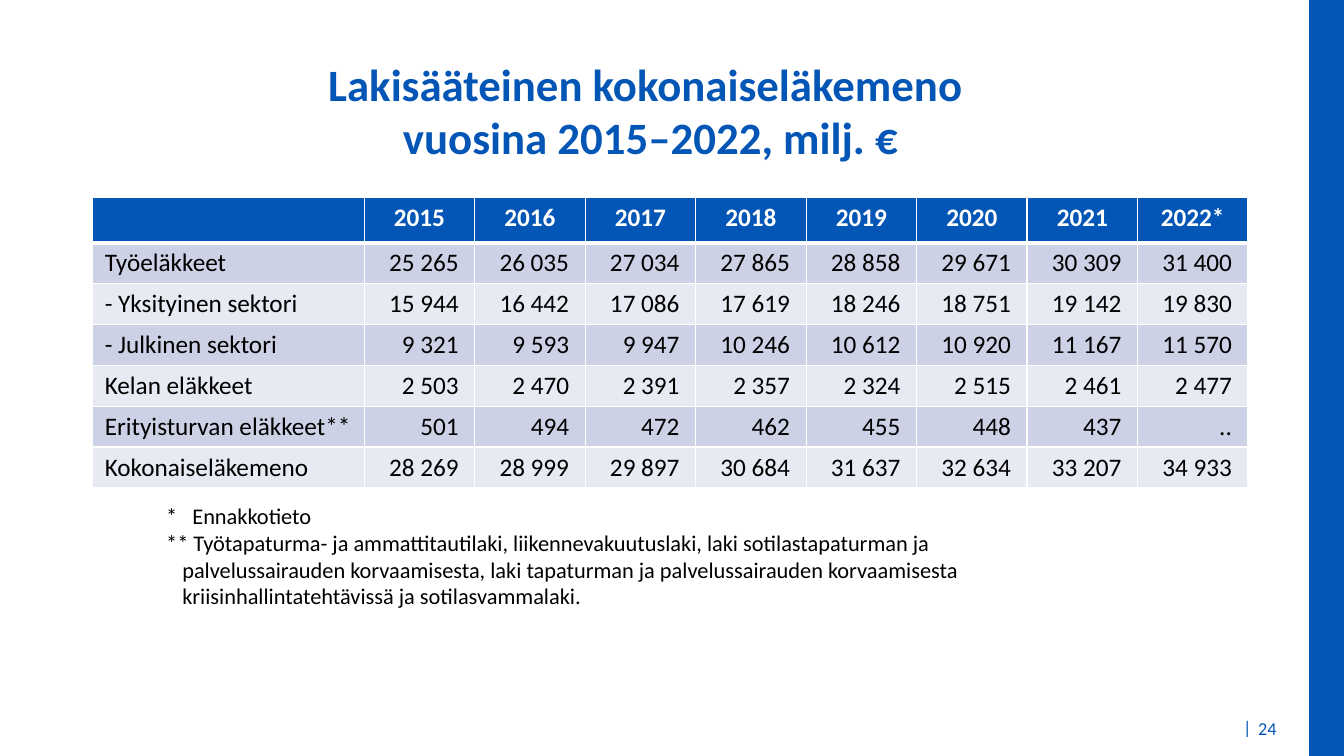
from pptx import Presentation
from pptx import util as u
from pptx.dml.color import RGBColor
from pptx.enum import shapes, text
from pptx.oxml import parse_xml
from pptx.oxml.ns import nsdecls

WIDTH, HEIGHT = u.Inches(13.33), u.Inches(7.5)
BLUE = RGBColor(0x03, 0x56, 0xB5)
WHITE = RGBColor(0xFF, 0xFF, 0xFF)
BLACK = RGBColor(0, 0, 0)
BAND_DARK = RGBColor(0xCC, 0xD1, 0xE5)
BAND_LIGHT = RGBColor(0xE7, 0xE9, 0xF3)

TITLE_FORMAT = {"size": u.Pt(32), "bold": True, "color": BLUE}
HEADER_FORMAT = {"size": u.Pt(18), "bold": True, "color": WHITE}
BODY_FORMAT = {"size": u.Pt(18), "bold": False, "color": BLACK}
NOTE_FORMAT = {"size": u.Pt(16), "color": BLACK}
FOOTER_FORMAT = {"size": u.Pt(13), "color": BLUE}

YEARS = ["", "2015", "2016", "2017", "2018", "2019", "2020", "2021", "2022*"]
EXPENDITURE = [
    ["Työeläkkeet", "25 265", "26 035", "27 034", "27 865", "28 858", "29 671", "30 309", "31 400"],
    ["- Yksityinen sektori", "15 944", "16 442", "17 086", "17 619", "18 246", "18 751", "19 142", "19 830"],
    ["- Julkinen sektori", "9 321", "9 593", "9 947", "10 246", "10 612", "10 920", "11 167", "11 570"],
    ["Kelan eläkkeet", "2 503", "2 470", "2 391", "2 357", "2 324", "2 515", "2 461", "2 477"],
    ["Erityisturvan eläkkeet**", "501", "494", "472", "462", "455", "448", "437", ".."],
    ["Kokonaiseläkemeno", "28 269", "28 999", "29 897", "30 684", "31 637", "32 634", "33 207", "34 933"],
]
NOTES = [
    ("*\tEnnakkotieto", 0.26),
    ("** Työtapaturma- ja ammattitautilaki, liikennevakuutuslaki, laki sotilastapaturman ja "
     "palvelussairauden korvaamisesta, laki tapaturman ja palvelussairauden korvaamisesta "
     "kriisinhallintatehtävissä ja sotilasvammalaki.", 0.16),
]


def percent_box(left, top, width, height):
    return (int(WIDTH * left / 100), int(HEIGHT * top / 100),
            int(WIDTH * width / 100), int(HEIGHT * height / 100))


def format_paragraph(paragraph, values, alignment=text.PP_ALIGN.LEFT):
    paragraph.alignment = alignment
    font = paragraph.font
    font.name = "Calibri"
    for name, value in values.items():
        if name == "color":
            font.color.rgb = value
        else:
            setattr(font, name, value)


def add_text(slide, box, words, values, alignment=text.PP_ALIGN.LEFT,
             anchor=text.MSO_ANCHOR.TOP, wrap=True):
    frame = slide.shapes.add_textbox(*box).text_frame
    frame.word_wrap = wrap
    frame.vertical_anchor = anchor
    frame.text = words
    format_paragraph(frame.paragraphs[0], values, alignment)
    return frame


def add_side_bar(slide, box):
    bar = slide.shapes.add_shape(shapes.MSO_SHAPE.RECTANGLE, *box)
    bar.shadow.inherit = False
    bar.fill.solid()
    bar.fill.fore_color.rgb = BLUE
    bar.line.fill.background()


def set_borders(cell, widths):
    properties = cell._tc.get_or_add_tcPr()
    for position, (side, points) in enumerate(widths.items()):
        properties.insert(position, parse_xml(
            f'<a:{side} {nsdecls("a")} w="{u.Pt(points)}"><a:solidFill>'
            f'<a:srgbClr val="{WHITE}"/></a:solidFill></a:{side}>'))


def fill_cell(cell, words, row, column):
    cell.text = words
    cell.fill.solid()
    paragraph = cell.text_frame.paragraphs[0]
    if row == 0:
        cell.fill.fore_color.rgb = BLUE
        format_paragraph(paragraph, HEADER_FORMAT, text.PP_ALIGN.CENTER)
    else:
        cell.fill.fore_color.rgb = BAND_DARK if row % 2 else BAND_LIGHT
        format_paragraph(paragraph, BODY_FORMAT,
                         text.PP_ALIGN.RIGHT if column else text.PP_ALIGN.LEFT)
        if column:
            cell.margin_right = u.Inches(0.16)
        else:
            cell.margin_left = u.Inches(0.12)
        if column >= 5:
            cell.margin_left = u.Inches(0.04)
            cell.vertical_anchor = text.MSO_ANCHOR.MIDDLE
    set_borders(cell, {"lnL": 1, "lnR": 1, "lnT": 3 if row == 1 else 1,
                       "lnB": 3 if row == 0 else 1})


def add_expenditure_table(slide, box):
    rows = [YEARS] + EXPENDITURE
    table = slide.shapes.add_table(len(rows), len(YEARS), *box).table
    width, height = box[2:]
    label_width, header_height = int(width * 23.5 / 100), int(height * 15.6 / 100)
    for index, column in enumerate(table.columns):
        column.width = (width - label_width) // (len(YEARS) - 1) if index else label_width
    for index, row in enumerate(table.rows):
        row.height = (height - header_height) // len(EXPENDITURE) if index else header_height
    for row, values in enumerate(rows):
        for column, words in enumerate(values):
            fill_cell(table.cell(row, column), words, row, column)


def add_notes(slide, box):
    frame = slide.shapes.add_textbox(*box).text_frame
    frame.word_wrap = True
    for index, (words, indent) in enumerate(NOTES):
        paragraph = frame.add_paragraph() if index else frame.paragraphs[0]
        paragraph.text = words
        properties = paragraph._p.get_or_add_pPr()
        properties.set("marL", str(u.Inches(indent)))
        properties.set("indent", str(-u.Inches(indent)))
        format_paragraph(paragraph, NOTE_FORMAT)


def add_page_number(slide, separator_box, number_box):
    add_text(slide, separator_box, "|", FOOTER_FORMAT, wrap=False)
    add_text(slide, number_box, "24", FOOTER_FORMAT, anchor=text.MSO_ANCHOR.MIDDLE)


def main():
    presentation = Presentation()
    presentation.slide_width, presentation.slide_height = WIDTH, HEIGHT
    slide = presentation.slides.add_slide(presentation.slide_layouts[6])
    add_side_bar(slide, percent_box(97.4, 0, 2.6, 100))
    add_text(slide, percent_box(-0.23, 6.8, 97.3, 19.47),
             "Lakisääteinen kokonaiseläkemeno \vvuosina 2015–2022, milj. €",
             TITLE_FORMAT, text.PP_ALIGN.CENTER)
    add_expenditure_table(slide, percent_box(6.9, 26.13, 85.97, 38.4))
    add_notes(slide, percent_box(11.63, 65.73, 70.2, 15.73))
    add_page_number(slide, percent_box(91.75, 94.13, 2.18, 4.67),
                    percent_box(92.87, 94, 3.3, 4.67))
    presentation.save("out.pptx")


if __name__ == "__main__":
    main()
